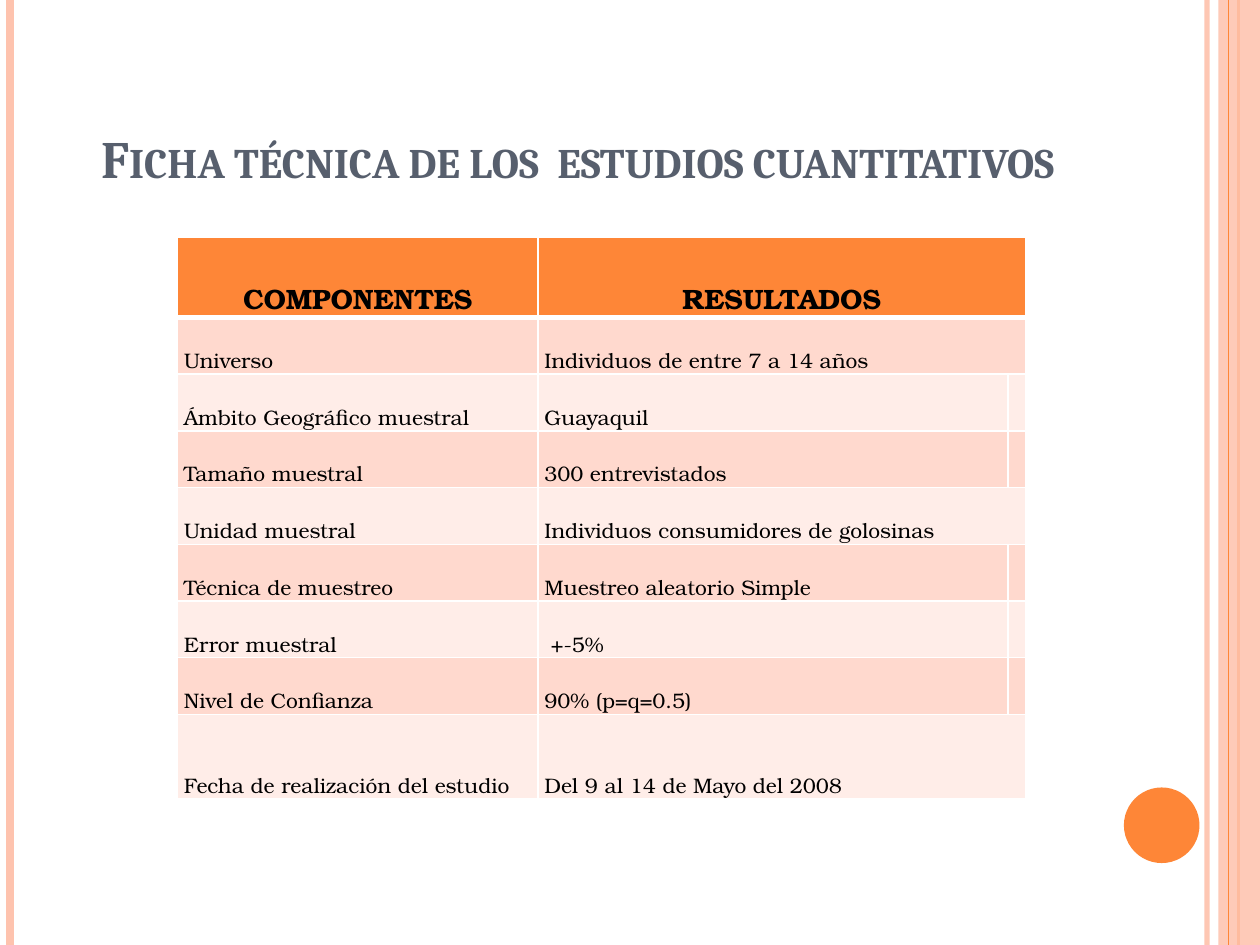
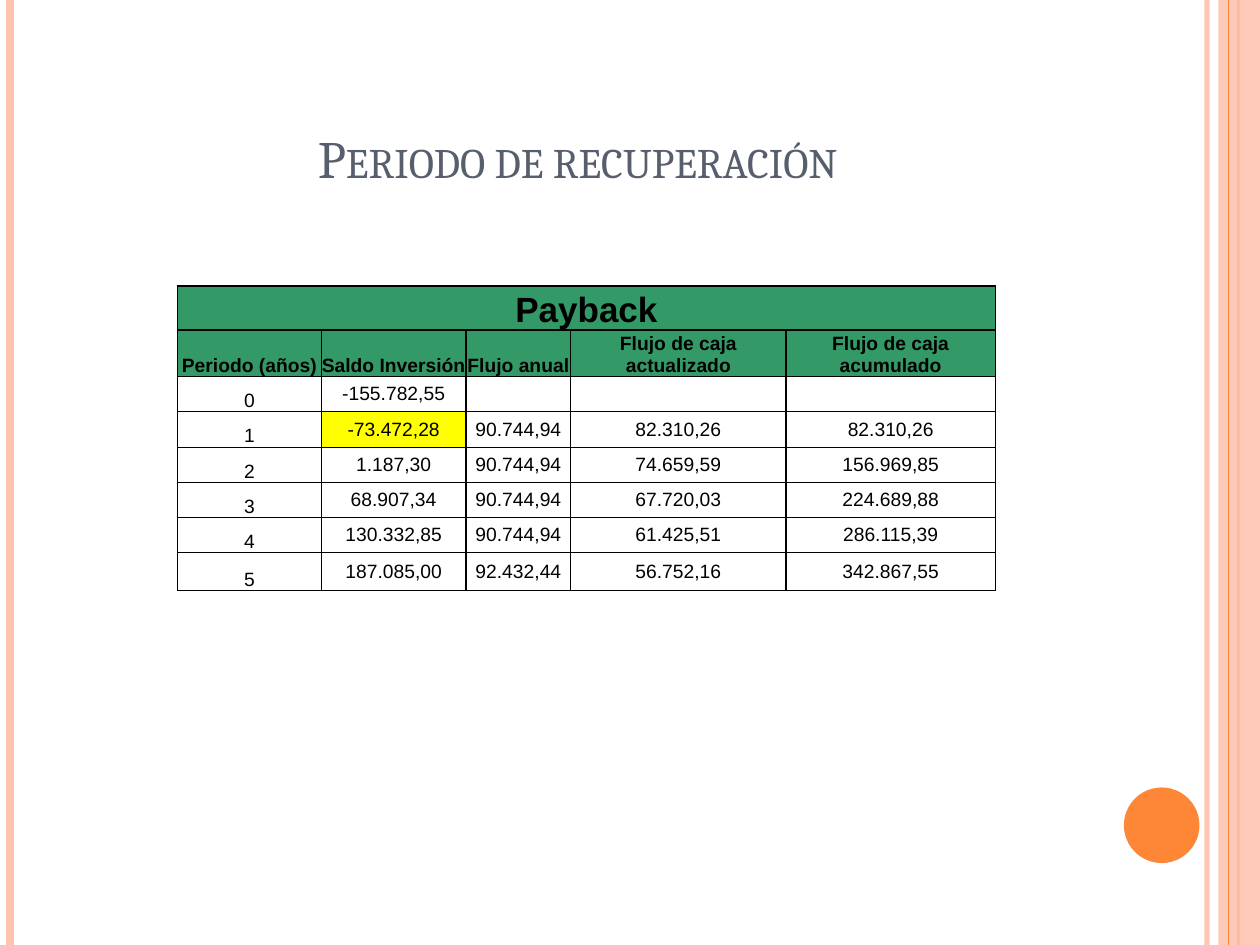
from dataclasses import dataclass

from lxml import etree
from pptx import Presentation
from pptx import util as u
from pptx.dml.color import RGBColor
from pptx.enum import shapes, text
from pptx.oxml.ns import qn


@dataclass(frozen=True)
class Theme:
    """Colours, fonts and type sizes shared by the slides."""
    orange: str = "FE8637"
    peach: str = "FEC3AE"
    slate: str = "575F6D"
    black: str = "000000"
    white: str = "FFFFFF"
    bands: tuple = ("FFD9CE", "FFEDE8")
    green: str = "339966"
    yellow: str = "FFFF00"
    title_font: str = "Cambria"
    survey_font: str = "TeX Gyre Bonum"
    payback_font: str = "Arial"
    title_size: int = 30
    survey_header_size: int = 16
    survey_size: int = 12
    payback_title_size: int = 20
    payback_size: int = 11


THEME = Theme()
COLUMNS, ROWS = 10, 7.5
BOTTOM, MIDDLE = text.MSO_ANCHOR.BOTTOM, text.MSO_ANCHOR.MIDDLE
LEFT, CENTER = text.PP_ALIGN.LEFT, text.PP_ALIGN.CENTER

SURVEY = [
    ("COMPONENTES", "RESULTADOS"),
    ("Universo", "Individuos de entre 7 a 14 años"),
    ("Ámbito Geográfico muestral", "Guayaquil"),
    ("Tamaño muestral", "300 entrevistados"),
    ("Unidad muestral", "Individuos consumidores de golosinas"),
    ("Técnica de muestreo", "Muestreo aleatorio Simple"),
    ("Error muestral", " +-5%"),
    ("Nivel de Confianza", "90% (p=q=0.5)"),
    ("Fecha de realización del estudio", "Del 9 al 14 de Mayo del 2008"),
]
SURVEY_MERGED_ROWS = (0, 1, 4, 8)

PAYBACK = [
    ("Payback",),
    ("Periodo (años)", "Saldo Inversión", "Flujo anual",
     "Flujo de caja actualizado", "Flujo de caja acumulado"),
    ("0", "-155.782,55"),
    ("1", "-73.472,28", "90.744,94", "82.310,26", "82.310,26"),
    ("2", "1.187,30", "90.744,94", "74.659,59", "156.969,85"),
    ("3", "68.907,34", "90.744,94", "67.720,03", "224.689,88"),
    ("4", "130.332,85", "90.744,94", "61.425,51", "286.115,39"),
    ("5", "187.085,00", "92.432,44", "56.752,16", "342.867,55"),
]
RECOVERY_CELL = (3, 1)


def grid(*counts):
    """Turn counts of grid columns or rows into lengths."""
    return [u.Inches(count) for count in counts]


def rgb(color):
    """Return the colour object for a hex string."""
    return RGBColor.from_string(color)


def set_opacity(part, percent):
    """Make the coloured parts of a shape or connector translucent."""
    for color in part._element.spPr.iter(qn("a:srgbClr")):
        etree.SubElement(color, qn("a:alpha"), val=str(percent * 1000))


def set_font(paragraph, name, size, color, bold=False):
    """Style a whole paragraph."""
    font = paragraph.font
    font.name, font.size, font.bold = name, u.Pt(size), bold
    font.color.rgb = rgb(color)


def add_stripe(slide, column, color, weight):
    """Draw a vertical rule over the whole slide height."""
    stripe = slide.shapes.add_connector(
        shapes.MSO_CONNECTOR.STRAIGHT, *grid(column, 0, column, ROWS))
    stripe.line.color.rgb = rgb(color)
    stripe.line.width = u.Pt(weight)
    etree.SubElement(stripe._element.spPr, qn("a:effectLst"))
    return stripe


def add_solid(slide, kind, box, color):
    """Draw a borderless filled shape."""
    solid = slide.shapes.add_shape(kind, *grid(*box))
    solid.shadow.inherit = False
    solid.fill.solid()
    solid.fill.fore_color.rgb = rgb(color)
    solid.line.fill.background()
    return solid


def add_frame(slide):
    """Draw the side bands and the disc."""
    set_opacity(add_stripe(slide, 9.58, THEME.peach, 3), 93)
    add_stripe(slide, 0.08, THEME.peach, 4.5)
    add_stripe(slide, 9.83, THEME.orange, 1.5)
    band = add_solid(slide, shapes.MSO_SHAPE.RECTANGLE,
                     (9.67, 0, 0.33, ROWS), THEME.peach)
    set_opacity(band, 87)
    add_stripe(slide, 9.75, THEME.orange, 0.75)
    add_solid(slide, shapes.MSO_SHAPE.OVAL, (8.92, 6.25, 0.6, 0.6), THEME.orange)


def add_title(slide, wording, bold):
    """Write the slide title in small capitals."""
    frame = slide.shapes.add_textbox(*grid(0.5, 0.3, 8.17, 1.25)).text_frame
    frame.word_wrap = True
    frame.vertical_anchor = BOTTOM
    heading = frame.paragraphs[0]
    heading.text = wording
    heading.alignment = CENTER
    set_font(heading, THEME.title_font, THEME.title_size, THEME.slate, bold)
    heading._p.get_or_add_pPr().get_or_add_defRPr().set("cap", "small")


def add_slide(deck, title, bold=False):
    """Add a slide with the shared frame and its title."""
    slide = deck.slides.add_slide(deck.slide_layouts[6])
    add_frame(slide)
    add_title(slide, title, bold)
    return slide


def add_grid_table(slide, corner, widths, heights):
    """Add an unbanded table with given column widths and row heights."""
    table = slide.shapes.add_table(
        len(heights), len(widths),
        *grid(*corner, sum(widths), sum(heights))).table
    table.first_row = table.horz_banding = False
    for column, width in zip(table.columns, grid(*widths)):
        column.width = width
    for row, height in zip(table.rows, grid(*heights)):
        row.height = height
    return table


def set_borders(cell, color, left=1, right=1, top=1, bottom=1):
    """Rule the four sides of a cell with weights in points."""
    sides = zip(("lnL", "lnR", "lnT", "lnB"), (left, right, top, bottom))
    for position, (side, weight) in enumerate(sides):
        rule = etree.Element(qn(f"a:{side}"), w=str(u.Pt(weight)))
        paint = etree.SubElement(rule, qn("a:solidFill"))
        etree.SubElement(paint, qn("a:srgbClr"), val=color)
        cell._tc.get_or_add_tcPr().insert(position, rule)


def fill_cell(cell, wording, fill, anchor, align, inset=0):
    """Set the text, ground and placement of a cell; return its paragraph."""
    cell.fill.solid()
    cell.fill.fore_color.rgb = rgb(fill)
    cell.vertical_anchor = anchor
    cell.margin_left = cell.margin_right = u.Inches(inset)
    cell.margin_top = cell.margin_bottom = 0
    paragraph = cell.text_frame.paragraphs[0]
    paragraph.text = wording
    paragraph.alignment = align
    return paragraph


def table_cells(table, records):
    """Yield row, column, cell and wording, with blanks for short records."""
    for r, record in enumerate(records):
        for c in range(len(table.columns)):
            yield r, c, table.cell(r, c), record[c] if c < len(record) else ""


def add_survey_table(slide):
    """Build the survey data sheet."""
    table = add_grid_table(slide, (1.41, 1.88), (2.86, 3.73, 0.13),
                           [0.64] + [0.45] * 7 + [0.67])
    for r, c, cell, wording in table_cells(table, SURVEY):
        header = r == 0
        fill = THEME.orange if header else THEME.bands[(r - 1) % 2]
        paragraph = fill_cell(cell, wording, fill, BOTTOM,
                              CENTER if header else LEFT, inset=0.05)
        if wording:
            paragraph.line_spacing = 2.0
        size = THEME.survey_header_size if header else THEME.survey_size
        set_font(paragraph, THEME.survey_font, size, THEME.black, header)
        set_borders(cell, THEME.white, bottom=3 if header else 1)
    for r in SURVEY_MERGED_ROWS:
        table.cell(r, 1).merge(table.cell(r, 2))


def add_payback_table(slide):
    """Build the payback schedule."""
    table = add_grid_table(slide, (1.41, 2.27), (1.14, 1.15, 0.83, 1.71, 1.66),
                           [0.35, 0.34] + [0.28] * 5 + [0.3])
    last = len(PAYBACK) - 1
    for r, c, cell, wording in table_cells(table, PAYBACK):
        header = r < 2
        fill = THEME.green if header else THEME.white
        if (r, c) == RECOVERY_CELL:
            fill = THEME.yellow
        anchor = BOTTOM if header or c == 0 else MIDDLE
        paragraph = fill_cell(cell, wording, fill, anchor, CENTER)
        size = THEME.payback_title_size if r == 0 else THEME.payback_size
        set_font(paragraph, THEME.payback_font, size, THEME.black, header)
        set_borders(cell, THEME.black, top=1 if r <= 2 else 0.5,
                    bottom=1 if header or r == last else 0.5)
    table.cell(0, 0).merge(table.cell(0, 4))


def main():
    """Build and save the deck."""
    deck = Presentation()
    deck.slide_width, deck.slide_height = grid(COLUMNS, ROWS)
    add_survey_table(add_slide(
        deck, "Ficha técnica de los  estudios cuantitativos", bold=True))
    add_payback_table(add_slide(deck, "Periodo de recuperación"))
    deck.save("out.pptx")


if __name__ == "__main__":
    main()
